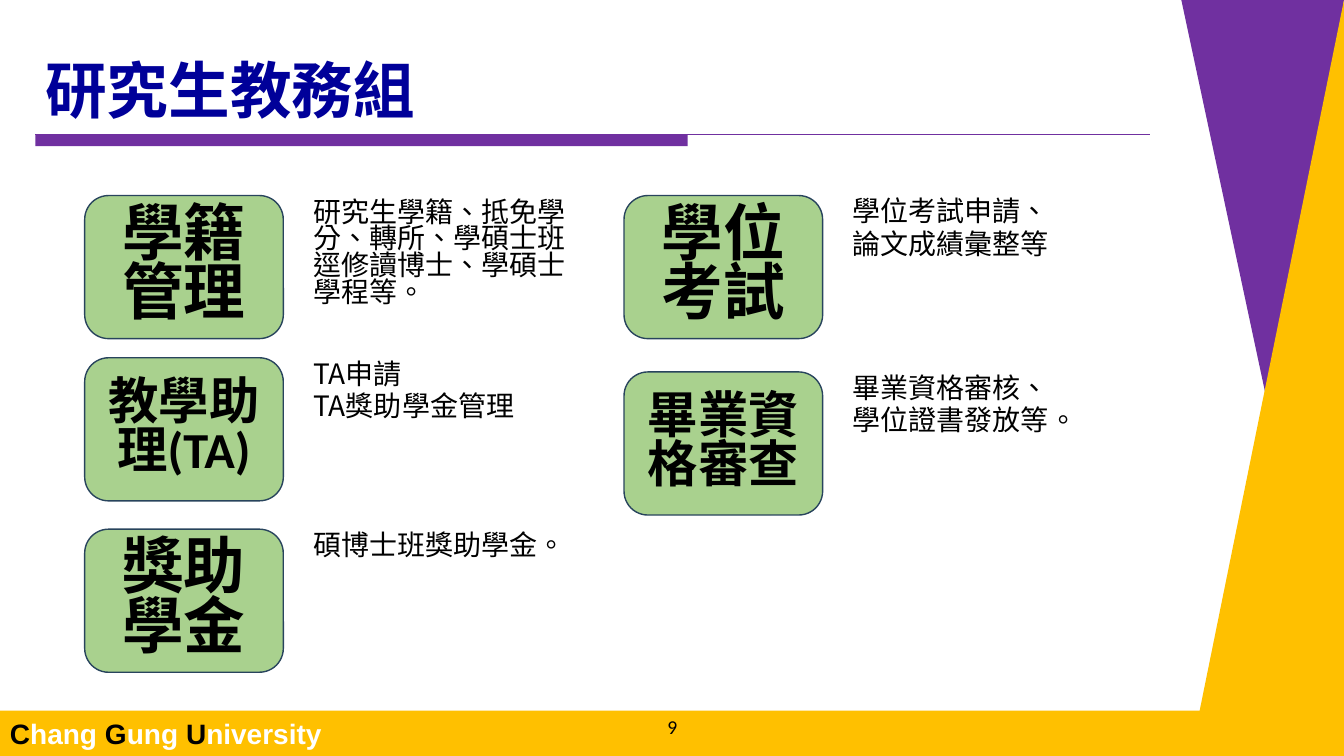
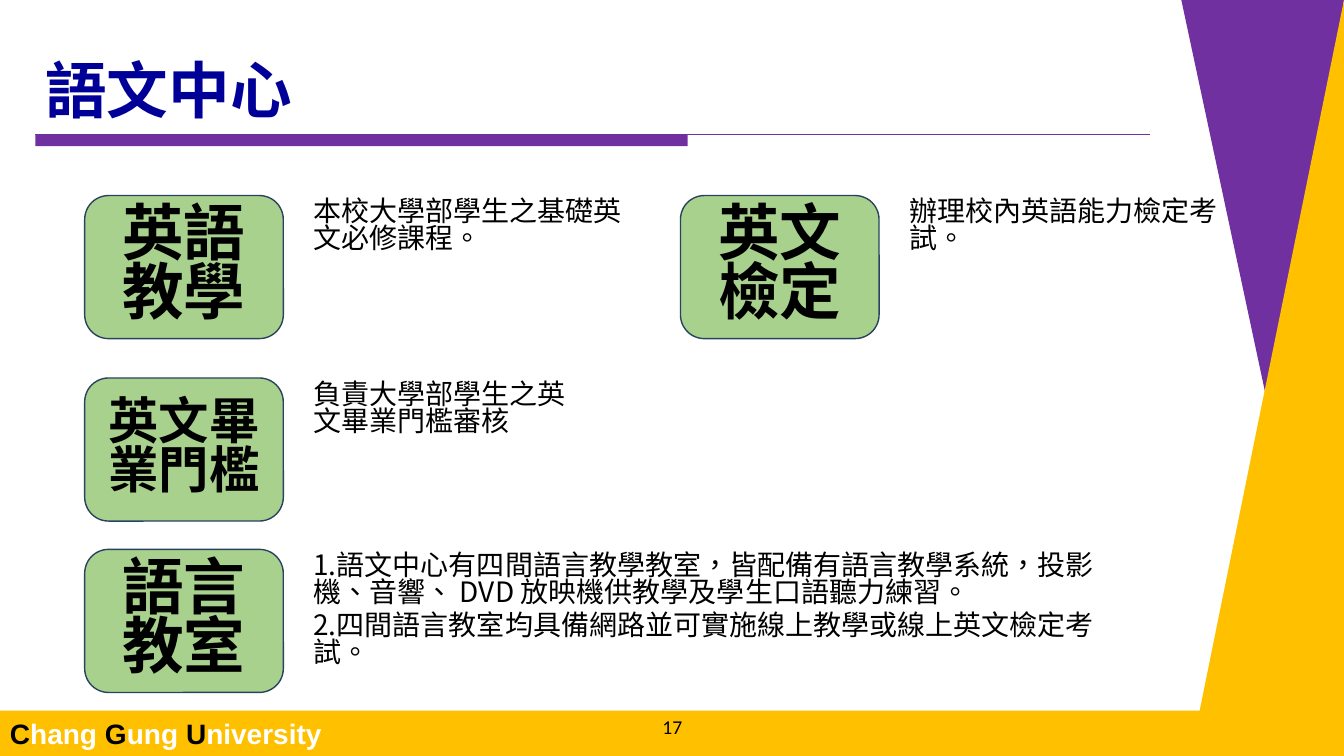
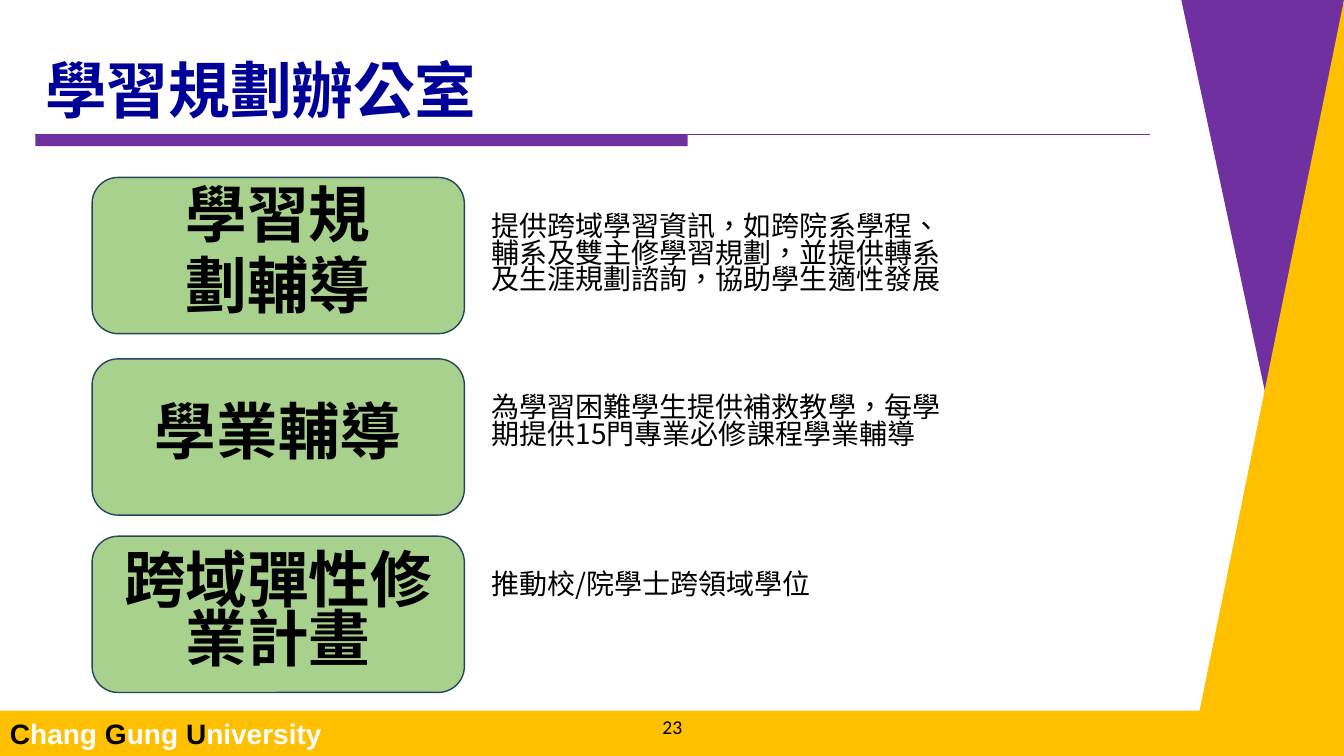
from dataclasses import dataclass
from lxml import etree
from pptx import Presentation
from pptx.dml.color import RGBColor
from pptx.enum.shapes import MSO_CONNECTOR as Connector, MSO_SHAPE as Shape
from pptx.enum.text import MSO_ANCHOR as Anchor, PP_ALIGN as Align
from pptx.oxml.ns import qn
from pptx.util import Inches, Pt

WIDTH, HEIGHT = Inches(13.333), Inches(7.5)
COLORS = {
    "purple": "7030A0",
    "gold": "FFC000",
    "green": "A9D18E",
    "outline": "28445D",
    "navy": "000099",
    "black": "000000",
    "white": "FFFFFF",
}
CJK_FONT = "Noto Sans CJK SC"
LABEL_FONT = "Calibri"
BAND_FONT = "Arial"
BAND_TOP = 94
RULE_LEFT, RULE_TOP, RULE_WIDTH = 2.63, 17.73, 82.95
LEFT, RIGHT = 6.3, 46.43
FIRST_ROW = 25.87


@dataclass
class CardStyle:
    width: float
    height: float
    gap: float
    drop: float


SMALL = CardStyle(14.78, 18.93, 1.5, 0)
LARGE = CardStyle(27.7, 20.67, 1.28, 4.27)


def across(percent):
    return round(WIDTH * percent / 100)


def down(percent):
    return round(HEIGHT * percent / 100)


def place(left, top, width, height):
    return across(left), down(top), across(width), down(height)


def rgb(name):
    return RGBColor.from_string(COLORS[name])


def paint(shape, fill, line=None):
    shape.shadow.inherit = False
    shape.fill.solid()
    shape.fill.fore_color.rgb = rgb(fill)
    if line:
        shape.line.color.rgb = rgb(line)
        shape.line.width = Pt(1)
    else:
        shape.line.fill.background()


def format_run(run, size, font, color, bold=False):
    run.font.size = Pt(size)
    run.font.bold = bold
    run.font.color.rgb = rgb(color)
    run.font.name = font
    properties = run._r.get_or_add_rPr()
    properties.set("lang", "zh-TW")
    etree.SubElement(properties, qn("a:ea")).set("typeface", CJK_FONT)


def write(shape, lines, size, font, color="black", bold=False,
          align=Align.LEFT, anchor=Anchor.TOP, spacing=0.8):
    frame = shape.text_frame
    frame.word_wrap = True
    frame.vertical_anchor = anchor
    frame.text = "\n".join(lines)
    for index, paragraph in enumerate(frame.paragraphs):
        paragraph.alignment = align
        paragraph.line_spacing = spacing
        if index:
            paragraph.space_before = Pt(size * 0.2)
        for run in paragraph.runs:
            format_run(run, size, font, color, bold)


def add_polygon(slide, points, fill):
    corners = [(across(x), down(y)) for x, y in points]
    builder = slide.shapes.build_freeform(*corners[0])
    builder.add_line_segments(corners[1:], close=True)
    paint(builder.convert_to_shape(), fill)


def add_block(slide, box, fill, line=None, kind=Shape.RECTANGLE):
    shape = slide.shapes.add_shape(kind, *place(*box))
    paint(shape, fill, line)
    return shape


def add_text(slide, box, lines, size, font, **style):
    shape = slide.shapes.add_textbox(*place(*box))
    write(shape, lines, size, font, **style)


def add_rule(slide):
    add_block(slide, (RULE_LEFT, RULE_TOP, 48.53, 1.6), "purple")
    y = down(RULE_TOP)
    line = slide.shapes.add_connector(
        Connector.STRAIGHT, across(RULE_LEFT), y,
        across(RULE_LEFT + RULE_WIDTH), y)
    line.line.color.rgb = rgb("purple")
    line.line.width = Pt(0.75)
    etree.SubElement(line._element.spPr, qn("a:effectLst"))


def add_university_band(slide):
    band = add_block(slide, (0, BAND_TOP, 100, 100 - BAND_TOP), "gold")
    band.text_frame.vertical_anchor = Anchor.MIDDLE
    paragraph = band.text_frame.paragraphs[0]
    paragraph.alignment = Align.LEFT
    for initial, rest in (("C", "hang "), ("G", "ung "), ("U", "niversity")):
        for text, color in ((initial, "black"), (rest, "white")):
            run = paragraph.add_run()
            run.text = text
            format_run(run, 20, BAND_FONT, color, bold=True)


def add_page(presentation, title, number):
    slide = presentation.slides.add_slide(presentation.slide_layouts[6])
    add_polygon(slide, [(100, 0), (87.9, 0), (95.03, 59.33)], "purple")
    add_polygon(slide, [(100, 0), (89.25, BAND_TOP + 0.1),
                        (100, BAND_TOP + 0.1)], "gold")
    add_university_band(slide)
    add_rule(slide)
    add_text(slide, (RULE_LEFT, 5.33, RULE_WIDTH, 12.13), [title], 44,
             CJK_FONT, color="navy", bold=True, anchor=Anchor.BOTTOM,
             spacing=0.9)
    add_text(slide, (39.68, 94.27, 20.7, 3.73), [number], 14, LABEL_FONT,
             align=Align.CENTER, anchor=Anchor.MIDDLE, spacing=1)
    return slide


def add_card(slide, style, left, top, label, details, text_width,
             text_height, size=44):
    box = add_block(slide, (left, top, style.width, style.height), "green",
                    "outline", Shape.ROUNDED_RECTANGLE)
    write(box, label, size, LABEL_FONT, bold=True, align=Align.CENTER,
          anchor=Anchor.MIDDLE)
    add_text(slide, (left + style.width + style.gap, top + style.drop,
                     text_width, text_height), details, 20, CJK_FONT)


def add_cards(slide, style, cards):
    for card in cards:
        add_card(slide, style, *card)


def main():
    presentation = Presentation()
    presentation.slide_width, presentation.slide_height = WIDTH, HEIGHT

    graduate = add_page(presentation, "研究生教務組", "9")
    add_cards(graduate, SMALL, [
        (LEFT, FIRST_ROW, ["學籍管理"],
         ["研究生學籍、抵免學分、轉所、學碩士班逕修讀博士、學碩士學程等。"],
         21.53, 15.73),
        (RIGHT, FIRST_ROW, ["學位考試"],
         ["學位考試申請、", "論文成績彙整等"], 21.53, 9.47),
        (LEFT, 47.33, ["教學助理(TA)"],
         ["TA申請", "TA獎助學金管理"], 21.53, 9.47, 36),
        (LEFT, 70, ["獎助學金"], ["碩博士班獎助學金。"], 21.53, 4.93),
        (RIGHT, 49.2, ["畢業資格審查"],
         ["畢業資格審核、", "學位證書發放等。"], 21.53, 9.47, 36),
    ])

    language = add_page(presentation, "語文中心", "17")
    add_cards(language, SMALL, [
        (LEFT, FIRST_ROW, ["英語教學"],
         ["本校大學部學生之基礎英文必修課程。"], 24.45, 13.07),
        (LEFT, 72.67, ["語言教室"],
         ["1.語文中心有四間語言教學教室，皆配備有語言教學系統，投影機、音響、"
          " DVD 放映機供教學及學生口語聽力練習。",
          "2.四間語言教室均具備網路並可實施線上教學或線上英文檢定考試。"],
         60.53, 16.67),
        (LEFT, 50, ["英文畢業門檻"],
         ["負責大學部學生之英文畢業門檻審核"], 21.53, 8.53, 36),
        (50.63, FIRST_ROW, ["英文檢定"],
         ["辦理校內英語能力檢定考試。"], 24.45, 13.07),
    ])

    planning = add_page(presentation, "學習規劃辦公室", "23")
    add_cards(planning, LARGE, [
        (6.85, 23.47, ["學習規", "劃輔導"],
         ["提供跨域學習資訊，如跨院系學程、輔系及雙主修學習規劃，"
          "並提供轉系及生涯規劃諮詢，協助學生適性發展"], 36.3, 12.13),
        (6.85, 47.47, ["學業輔導"],
         ["為學習困難學生提供補救教學，每學期提供15門專業必修課程學業輔導"],
         35.85, 8.53),
        (6.85, 70.93, ["跨域彈性修業計畫"],
         ["推動校/院學士跨領域學位"], 40.35, 4.93),
    ])

    presentation.save("out.pptx")


if __name__ == "__main__":
    main()
